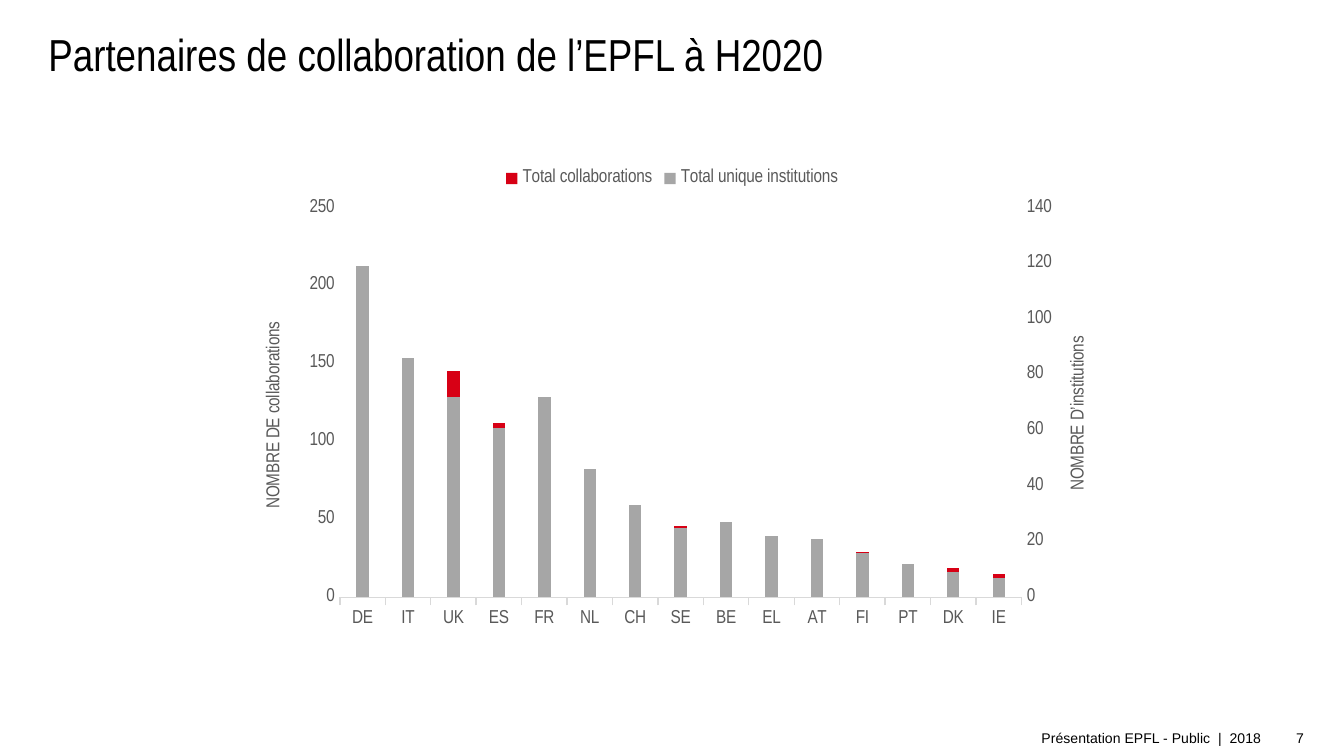
import copy
import dataclasses

import pptx
import pptx.chart.axis
import pptx.chart.data
import pptx.dml.color
import pptx.enum.chart
import pptx.enum.text
import pptx.oxml
import pptx.oxml.ns
import pptx.util

EMU_PER_PX = 914400 * 10 / 1344
QN = pptx.oxml.ns.qn
COUNTRIES = ["DE", "IT", "UK", "ES", "FR", "NL", "CH", "SE", "BE", "EL", "AT", "FI", "PT", "DK", "IE"]
COLLABORATIONS = [203, 150, 145, 112, 109, 73, 56, 46, 40, 35, 29, 29, 20, 19, 15]
INSTITUTIONS = [119, 86, 72, 61, 72, 46, 33, 25, 27, 22, 21, 16, 12, 9, 7]


@dataclasses.dataclass(frozen=True)
class Theme:
    black: str = "000000"
    label: str = "595959"
    axis_line: str = "D9D9D9"
    red: str = "D70015"
    grey: str = "A6A6A6"
    heading_font: str = "Arial Narrow"
    footer_font: str = "Arial"
    title_size: float = 24
    chart_size: float = 10
    footer_size: float = 7.5


def px(length):
    return pptx.util.Emu(round(length * EMU_PER_PX))


def rgb(color):
    return pptx.dml.color.RGBColor.from_string(color)


def set_layout(parent, is_plot=False, **fractions):
    layout = parent.find(QN("c:layout"))
    if layout is None:
        layout = pptx.oxml.parse_xml(f"<c:layout {pptx.oxml.ns.nsdecls('c')}/>")
        parent.insert(0, layout)
    target = '<c:layoutTarget val="inner"/>' if is_plot else ""
    modes = "".join(f'<c:{side}Mode val="edge"/>' for side in "xy")
    values = "".join(f'<c:{name} val="{value}"/>' for name, value in fractions.items())
    layout.append(pptx.oxml.parse_xml(
        f"<c:manualLayout {pptx.oxml.ns.nsdecls('c')}>{target}{modes}{values}</c:manualLayout>"))


class SlideBuilder:
    def __init__(self, presentation, theme):
        self.theme = theme
        self.slide = presentation.slides.add_slide(presentation.slide_layouts[5])

    def style_font(self, font, size, color, name):
        font.size = pptx.util.Pt(size)
        font.name = name
        font.bold = False
        font.color.rgb = rgb(color)

    def add_run(self, paragraph, text, size, color, name):
        run = paragraph.add_run()
        run.text = text
        self.style_font(run.font, size, color, name)

    def title(self, text, left, top, width, height):
        shape = self.slide.shapes.title
        shape.left, shape.top, shape.width, shape.height = map(px, (left, top, width, height))
        frame = shape.text_frame
        frame.word_wrap = True
        frame.vertical_anchor = pptx.enum.text.MSO_ANCHOR.MIDDLE
        paragraph = frame.paragraphs[0]
        paragraph.alignment = pptx.enum.text.PP_ALIGN.LEFT
        self.add_run(paragraph, text, self.theme.title_size, self.theme.black, self.theme.heading_font)

    def footer(self, text, left, top, width, height):
        frame = self.slide.shapes.add_textbox(*map(px, (left, top, width, height))).text_frame
        frame.word_wrap = True
        frame.vertical_anchor = pptx.enum.text.MSO_ANCHOR.MIDDLE
        frame.margin_left = frame.margin_right = frame.margin_top = frame.margin_bottom = px(7)
        paragraph = frame.paragraphs[0]
        paragraph.alignment = pptx.enum.text.PP_ALIGN.RIGHT
        self.add_run(paragraph, text, self.theme.footer_size, self.theme.black, self.theme.footer_font)

    def style_chart_font(self, font):
        self.style_font(font, self.theme.chart_size, self.theme.label, self.theme.heading_font)

    def value_axis(self, axis, title, maximum, step, x, y):
        axis.minimum_scale, axis.maximum_scale, axis.major_unit = 0, maximum, step
        axis.has_major_gridlines = False
        axis.major_tick_mark = pptx.enum.chart.XL_TICK_MARK.NONE
        axis.format.line.fill.background()
        self.style_chart_font(axis.tick_labels.font)
        frame = axis.axis_title.text_frame
        self.add_run(frame.paragraphs[0], title, self.theme.chart_size,
                     self.theme.label, self.theme.heading_font)
        title_element = axis._element.find(QN("c:title"))
        body = title_element.find(".//" + QN("a:bodyPr"))
        body.set("rot", "-5400000")
        body.set("vert", "horz")
        set_layout(title_element, x=x, y=y)

    def add_secondary_axes(self, chart):
        plot_area = chart._chartSpace.find(".//" + QN("c:plotArea"))
        bars = plot_area.find(QN("c:barChart"))
        category = plot_area.find(QN("c:catAx"))
        value = plot_area.find(QN("c:valAx"))
        right_bars, right_category, right_value = map(copy.deepcopy, (bars, category, value))
        bars.remove(bars.findall(QN("c:ser"))[1])
        right_bars.remove(right_bars.findall(QN("c:ser"))[0])
        bars.addnext(right_bars)
        value.addnext(right_value)
        right_value.addnext(right_category)
        ids = {category.find(QN("c:axId")).get("val"): "5001",
               value.find(QN("c:axId")).get("val"): "5002"}
        for element in (right_bars, right_category, right_value):
            for tag in ("c:axId", "c:crossAx"):
                for reference in element.findall(QN(tag)):
                    reference.set("val", ids[reference.get("val")])
        right_value.find(QN("c:axPos")).set("val", "r")
        right_value.find(QN("c:crosses")).set("val", "max")
        pptx.chart.axis.CategoryAxis(right_category).visible = False
        return pptx.chart.axis.ValueAxis(right_value)

    def chart(self, left, top, width, height):
        data = pptx.chart.data.CategoryChartData()
        data.categories = COUNTRIES
        data.add_series("Total collaborations", COLLABORATIONS)
        data.add_series("Total unique institutions", INSTITUTIONS)
        chart = self.slide.shapes.add_chart(
            pptx.enum.chart.XL_CHART_TYPE.COLUMN_CLUSTERED,
            *map(px, (left, top, width, height)), data).chart
        chart.has_title = False
        self.style_chart_font(chart.font)
        plot = chart.plots[0]
        plot.gap_width = 269
        plot.vary_by_categories = False
        for series, color in zip(plot.series, (self.theme.red, self.theme.grey)):
            series.format.fill.solid()
            series.format.fill.fore_color.rgb = rgb(color)
            series.invert_if_negative = False

        axis = chart.category_axis
        axis.major_tick_mark = pptx.enum.chart.XL_TICK_MARK.OUTSIDE
        axis.format.line.color.rgb = rgb(self.theme.axis_line)
        axis.format.line.width = pptx.util.Pt(0.75)
        self.style_chart_font(axis.tick_labels.font)

        left_axis = chart.value_axis
        right_axis = self.add_secondary_axes(chart)
        self.value_axis(left_axis, "NOMBRE DE collaborations", 250, 50, 0.03, 0.34)
        self.value_axis(right_axis, "NOMBRE D’institutions", 140, 20, 0.95, 0.37)

        chart.has_legend = True
        chart.legend.position = pptx.enum.chart.XL_LEGEND_POSITION.TOP
        chart.legend.include_in_layout = False
        self.style_chart_font(chart.legend.font)
        set_layout(chart._chartSpace.find(".//" + QN("c:plotArea")), True,
                   x=0.12, y=0.11, w=0.78, h=0.81)


def main():
    presentation = pptx.Presentation()
    presentation.slide_width, presentation.slide_height = px(1344), px(756)
    builder = SlideBuilder(presentation, Theme())
    builder.title("Partenaires de collaboration de l’EPFL à H2020", 35, 20, 1277, 67)
    builder.chart(235, 155, 874, 481)
    builder.footer("Présentation EPFL - Public  |  2018", 210, 722, 1058, 32)
    builder.footer("7", 1269, 722, 42, 32)
    presentation.save("out.pptx")


if __name__ == "__main__":
    main()
